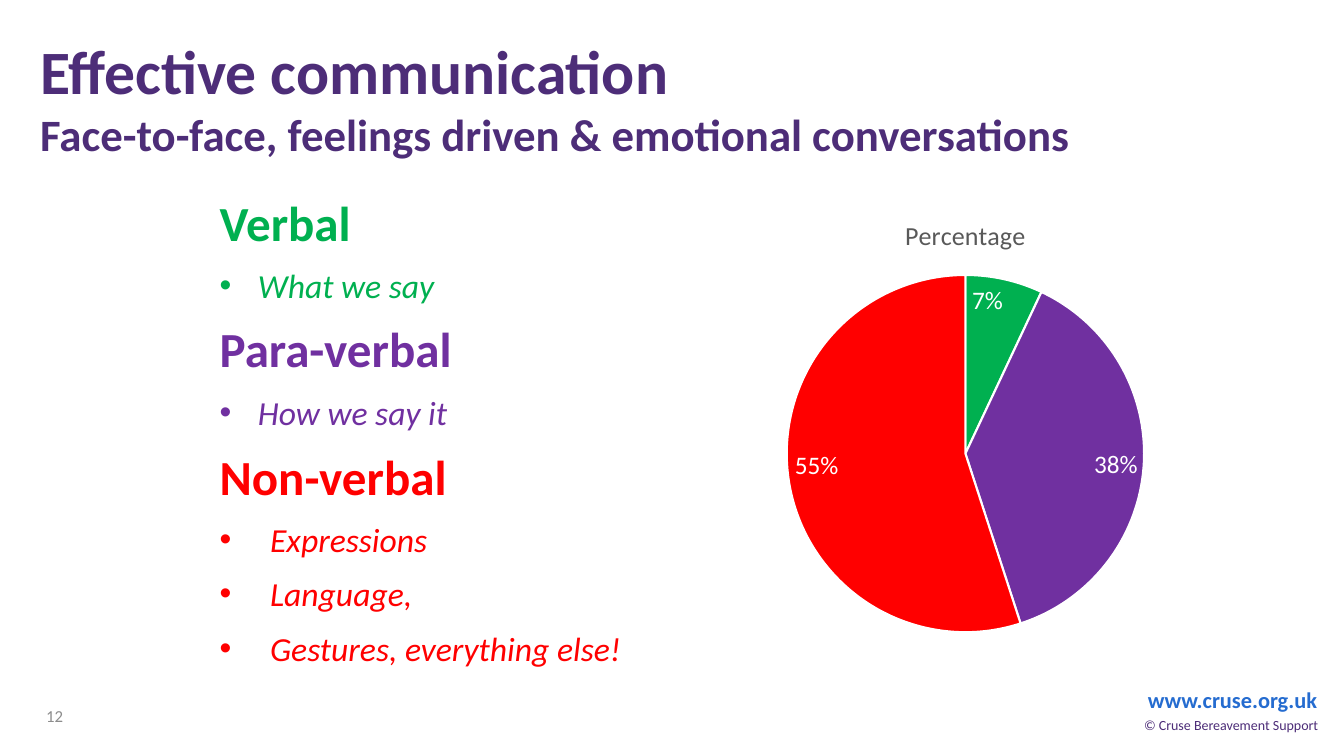
from dataclasses import dataclass

from lxml import etree
from pptx import Presentation
from pptx.chart.data import CategoryChartData
from pptx.dml.color import RGBColor
from pptx.enum.chart import XL_CHART_TYPE, XL_LABEL_POSITION
from pptx.enum.text import MSO_ANCHOR, PP_ALIGN
from pptx.oxml.ns import qn
from pptx.util import Inches, Pt


@dataclass(frozen=True)
class Theme:
    font: str = "Calibri"
    brand: str = "4D2D78"
    link: str = "256CD0"
    muted: str = "8C8C8C"
    chart_title: str = "595959"
    white: str = "FFFFFF"
    verbal: str = "00B050"
    para_verbal: str = "7030A0"
    non_verbal: str = "FF0000"
    title_size: float = 44
    heading_size: float = 35
    subtitle_size: float = 32
    body_size: float = 24
    chart_title_size: float = 18.6
    label_size: float = 18
    link_size: float = 16
    number_size: float = 12
    copyright_size: float = 10


class SlideBuilder:
    def __init__(self, slide, theme):
        self.slide = slide
        self.theme = theme

    def style(self, font, size, color, bold=False, italic=False):
        font.name = self.theme.font
        font.size = Pt(size)
        font.color.rgb = RGBColor.from_string(color)
        font.bold = bold
        font.italic = italic

    def frame(self, left, top, width, height, anchor=MSO_ANCHOR.TOP):
        box = self.slide.shapes.add_textbox(
            Inches(left), Inches(top), Inches(width), Inches(height))
        box.text_frame.word_wrap = True
        box.text_frame.vertical_anchor = anchor
        return box.text_frame

    def text(self, place, lines, color, bold=False, align=PP_ALIGN.LEFT,
             anchor=MSO_ANCHOR.TOP):
        """Place a box whose lines are (wording, size) pairs."""
        frame = self.frame(*place, anchor=anchor)
        frame.text = "\n".join(wording for wording, _ in lines)
        for paragraph, (_, size) in zip(frame.paragraphs, lines):
            paragraph.alignment = align
            self.style(paragraph.runs[0].font, size, color, bold)

    def bullet(self, paragraph, indent):
        properties = paragraph._p.get_or_add_pPr()
        properties.set("marL", str(Inches(indent)))
        properties.set("indent", str(-Inches(indent)))
        font = etree.SubElement(properties, qn("a:buFont"))
        font.set("typeface", "Arial")
        etree.SubElement(properties, qn("a:buChar")).set("char", "•")

    def outline(self, place, sections):
        """Place headings, each followed by its bulleted points."""
        theme = self.theme
        frame = self.frame(*place)
        lines = []
        for heading, color, indent, points in sections:
            lines.append((heading, color, 0))
            lines += [(point, color, indent) for point in points]
        frame.text = "\n".join(wording for wording, _, _ in lines)
        for paragraph, (_, color, indent) in zip(frame.paragraphs, lines):
            paragraph.space_before = Pt(10)
            if indent:
                self.bullet(paragraph, indent)
            size = theme.body_size if indent else theme.heading_size
            self.style(paragraph.runs[0].font, size, color,
                       bold=not indent, italic=bool(indent))
        first = frame.paragraphs[0]
        first.space_before = Pt(0)
        first.line_spacing = 0.8

    def pie(self, place, title, shares, colors):
        theme = self.theme
        data = CategoryChartData(number_format="0%")
        data.categories = [str(n) for n in range(1, len(shares) + 1)]
        data.add_series(title, shares)
        chart = self.slide.shapes.add_chart(
            XL_CHART_TYPE.PIE, *map(Inches, place), data).chart
        chart.has_legend = False
        chart.font.name = theme.font
        chart.font.size = Pt(10)

        chart.has_title = True
        heading = chart.chart_title.text_frame
        heading.text = title
        self.style(heading.paragraphs[0].runs[0].font,
                   theme.chart_title_size, theme.chart_title)

        plot = chart.plots[0]
        plot.vary_by_categories = True
        for index, color in enumerate(colors):
            form = plot.series[0].points[index].format
            form.fill.solid()
            form.fill.fore_color.rgb = RGBColor.from_string(color)
            form.line.color.rgb = RGBColor.from_string(theme.white)
            form.line.width = Pt(1.5)

        labels = plot.series[0].data_labels
        labels.show_value = True
        labels.show_percentage = False
        labels.number_format = "0%"
        labels.number_format_is_linked = False
        labels.position = XL_LABEL_POSITION.INSIDE_END
        self.style(labels.font, theme.label_size, theme.white)


def main():
    theme = Theme()
    deck = Presentation()
    deck.slide_width, deck.slide_height = Inches(13.33), Inches(7.5)
    page = SlideBuilder(deck.slides.add_slide(deck.slide_layouts[6]), theme)

    # Footer
    page.text((11.26, 6.76, 1.93, 0.37), [("www.cruse.org.uk", theme.link_size)],
              theme.link, bold=True, align=PP_ALIGN.CENTER)
    page.text((11.2, 7.06, 2.02, 0.44),
              [("© Cruse Bereavement Support", theme.copyright_size)],
              theme.brand, align=PP_ALIGN.CENTER)
    page.text((0.36, 6.9, 3, 0.4), [("12", theme.number_size)],
              theme.muted, anchor=MSO_ANCHOR.MIDDLE)

    # Title and subtitle
    page.text((0.3, 0.28, 12.61, 1.38), [
        ("Effective communication", theme.title_size),
        ("Face-to-face, feelings driven & emotional conversations",
         theme.subtitle_size),
    ], theme.brand, bold=True)

    # Kinds of communication
    page.outline((2.08, 1.97, 6.42, 5), [
        ("Verbal", theme.verbal, 0.38, ["What we say"]),
        ("Para-verbal", theme.para_verbal, 0.38, ["How we say it"]),
        ("Non-verbal", theme.non_verbal, 0.5,
         ["Expressions", "Language,", "Gestures, everything else!"]),
    ])

    # Share of each kind
    page.pie((6.24, 1.97, 6.67, 4.44), "Percentage", (0.07, 0.38, 0.55),
             (theme.verbal, theme.para_verbal, theme.non_verbal))

    deck.save("out.pptx")


if __name__ == "__main__":
    main()
